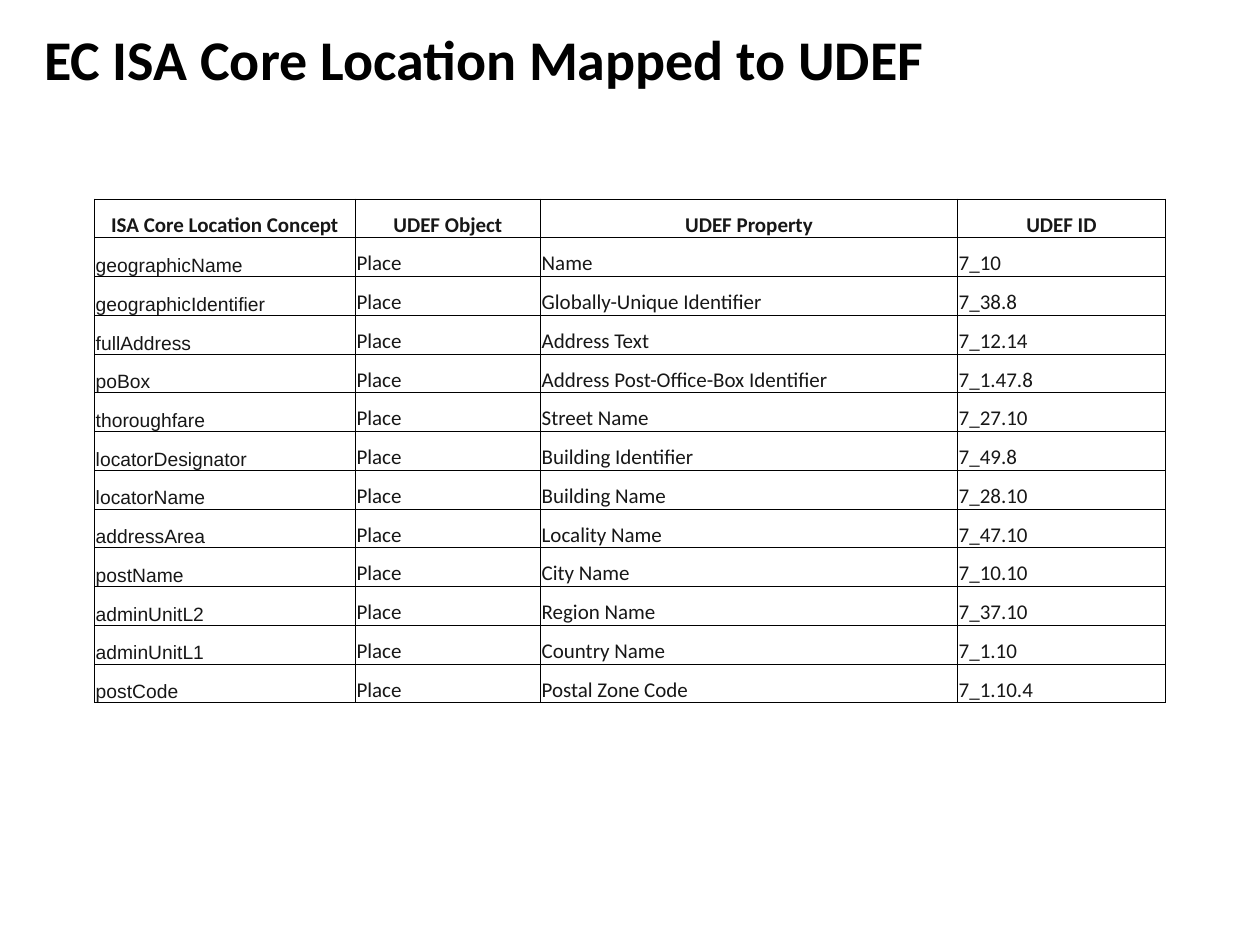
from dataclasses import dataclass

from lxml.etree import SubElement
from pptx import Presentation
from pptx.dml.color import RGBColor
from pptx.enum.text import MSO_ANCHOR as Anchor, MSO_AUTO_SIZE as AutoSize, PP_ALIGN as Align
from pptx.oxml.ns import qn
from pptx.util import Inches, Pt

SLIDE_W, SLIDE_H = 10, 7.5
COLORS = {"title": "000000", "text": "171717", "border": "000000", "fill": "FFFFFF"}
BORDER_PT = 0.5


@dataclass(frozen=True)
class TextStyle:
    font: str
    size: int
    color: str
    bold: bool = False
    align: Align = Align.LEFT


@dataclass(frozen=True)
class Mapping:
    concept: str
    udef_property: str
    udef_id: str
    udef_object: str = "Place"


TITLE = TextStyle("Calibri", 32, "title", bold=True)
HEADER = TextStyle("Calibri", 12, "text", bold=True, align=Align.CENTER)
CONCEPT = TextStyle("Arial", 11, "text")
UDEF = TextStyle("Calibri", 12, "text")

HEADINGS = ("ISA Core Location Concept", "UDEF Object", "UDEF Property", "UDEF ID")
COLUMN_WIDTHS = (2.07, 1.47, 3.31, 1.65)
TABLE_LEFT, TABLE_TOP, TABLE_HEIGHT = 0.75, 1.58, 4

MAPPINGS = (
    Mapping("geographicName", "Name", "7_10"),
    Mapping("geographicIdentifier", "Globally-Unique Identifier", "7_38.8"),
    Mapping("fullAddress", "Address Text", "7_12.14"),
    Mapping("poBox", "Address Post-Office-Box Identifier", "7_1.47.8"),
    Mapping("thoroughfare", "Street Name", "7_27.10"),
    Mapping("locatorDesignator", "Building Identifier", "7_49.8"),
    Mapping("locatorName", "Building Name", "7_28.10"),
    Mapping("addressArea", "Locality Name", "7_47.10"),
    Mapping("postName", "City Name", "7_10.10"),
    Mapping("adminUnitL2", "Region Name", "7_37.10"),
    Mapping("adminUnitL1", "Country Name", "7_1.10"),
    Mapping("postCode", "Postal Zone Code", "7_1.10.4"),
)


def write(frame, text: str, style: TextStyle) -> None:
    paragraph = frame.paragraphs[0]
    paragraph.alignment = style.align
    run = paragraph.add_run()
    run.text = text
    run.font.name = style.font
    run.font.size = Pt(style.size)
    run.font.bold = style.bold
    run.font.color.rgb = RGBColor.from_string(COLORS[style.color])


def add_borders(cell) -> None:
    """Outline all four sides; called before the fill, which must follow in the XML."""
    properties = cell._tc.get_or_add_tcPr()
    for side in ("a:lnL", "a:lnR", "a:lnT", "a:lnB"):
        line = SubElement(properties, qn(side), w=str(Pt(BORDER_PT)))
        solid = SubElement(line, qn("a:solidFill"))
        SubElement(solid, qn("a:srgbClr"), val=COLORS["border"])


def fill_cell(cell, text: str, style: TextStyle, filled: bool) -> None:
    cell.margin_left = cell.margin_right = cell.margin_top = Inches(0.01)
    cell.margin_bottom = 0
    cell.vertical_anchor = Anchor.BOTTOM
    add_borders(cell)
    if filled:
        cell.fill.solid()
        cell.fill.fore_color.rgb = RGBColor.from_string(COLORS["fill"])
    else:
        cell.fill.background()
    write(cell.text_frame, text, style)


def add_title(slide, text: str) -> None:
    title = slide.shapes.title
    title.left, title.top = Inches(0.25), Inches(0.08)
    title.width, title.height = Inches(SLIDE_W - 2 * 0.25), Inches(0.76)
    title.text_frame.auto_size = AutoSize.NONE
    title.text_frame.vertical_anchor = Anchor.MIDDLE
    write(title.text_frame, text, TITLE)


def add_mapping_table(slide) -> None:
    row_count = len(MAPPINGS) + 1
    table = slide.shapes.add_table(
        row_count, len(HEADINGS), Inches(TABLE_LEFT), Inches(TABLE_TOP),
        Inches(sum(COLUMN_WIDTHS)), Inches(TABLE_HEIGHT)).table
    table.first_row = table.horz_banding = False
    for column, width in zip(table.columns, COLUMN_WIDTHS):
        column.width = Inches(width)
    for row in table.rows:
        row.height = Inches(TABLE_HEIGHT / row_count)

    # Header row
    for column, heading in enumerate(HEADINGS):
        fill_cell(table.cell(0, column), heading, HEADER, filled=True)

    # One row per mapped concept
    for row, entry in enumerate(MAPPINGS, start=1):
        values = (entry.concept, entry.udef_object, entry.udef_property, entry.udef_id)
        for column, value in enumerate(values):
            style = CONCEPT if column == 0 else UDEF
            fill_cell(table.cell(row, column), value, style,
                      filled=value == "Address Text")


def main() -> None:
    deck = Presentation()
    deck.slide_width, deck.slide_height = Inches(SLIDE_W), Inches(SLIDE_H)
    title_only = deck.slide_layouts[5]
    slide = deck.slides.add_slide(title_only)
    add_title(slide, "EC ISA Core Location Mapped to UDEF")
    add_mapping_table(slide)
    deck.save("out.pptx")


if __name__ == "__main__":
    main()
